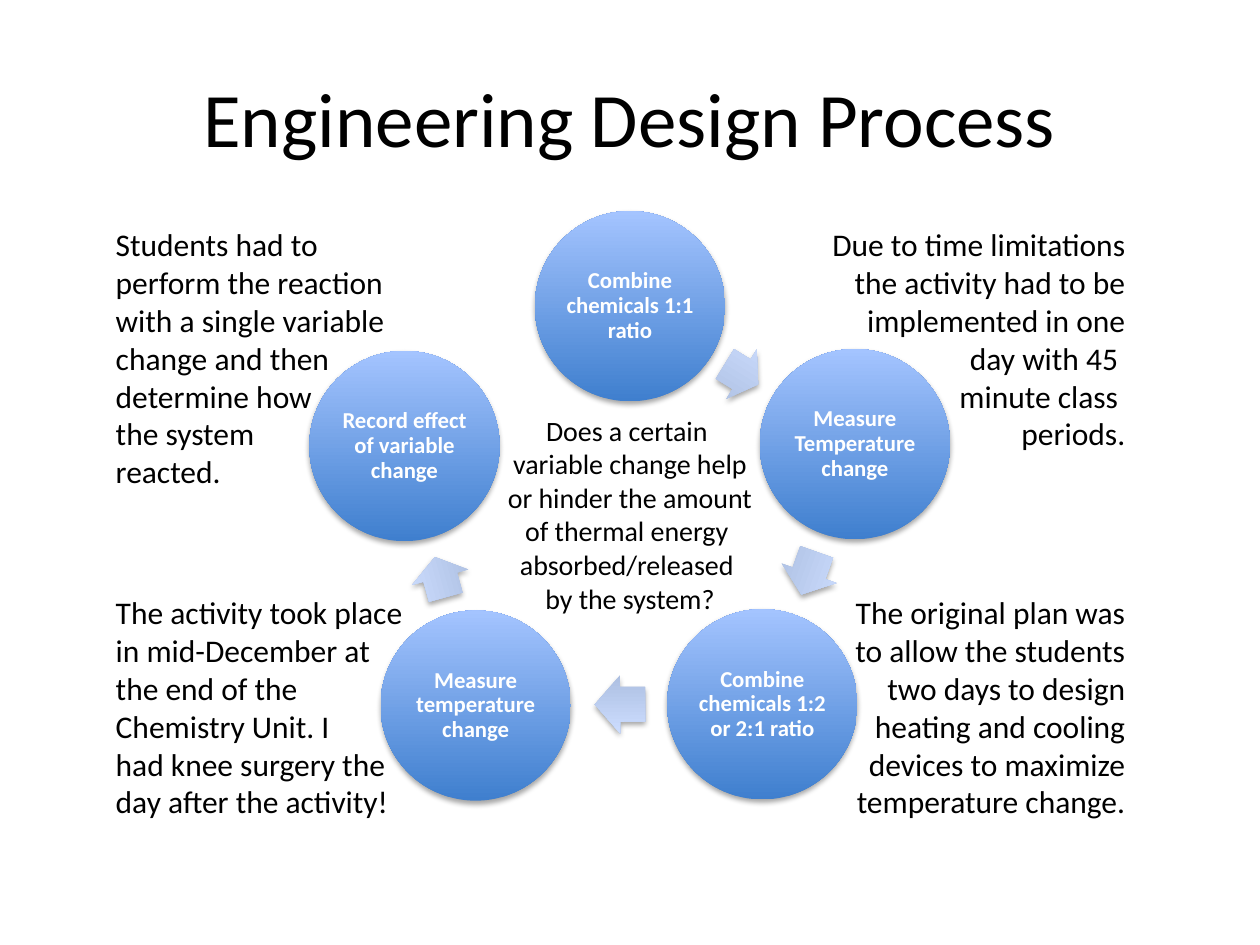
from lxml import etree
from pptx import Presentation
from pptx.dml.color import RGBColor
from pptx.enum.shapes import MSO_SHAPE
from pptx.enum.text import MSO_ANCHOR, PP_ALIGN
from pptx.oxml import parse_xml
from pptx.oxml.ns import nsdecls, qn
from pptx.util import Inches, Pt

OVAL, ARROW = MSO_SHAPE.OVAL, MSO_SHAPE.RIGHT_ARROW
LEFT, CENTER, RIGHT = PP_ALIGN.LEFT, PP_ALIGN.CENTER, PP_ALIGN.RIGHT
MIDDLE, TOP = MSO_ANCHOR.MIDDLE, MSO_ANCHOR.TOP
COLORS = {
    "ink": "000000", "white": "FFFFFF",
    "disc low": "3F7FCE", "disc high": "A4C4FF",
    "arrow low": "ADBFE1", "arrow high": "CCDDFF",
}

deck = Presentation()
deck.slide_width, deck.slide_height = Inches(10), Inches(7.5)
col, row = deck.slide_width / 100, deck.slide_height / 75
slide = deck.slides.add_slide(deck.slide_layouts[6])


def write(shape, lines, size, align, anchor, color="ink", bold=False):
    frame = shape.text_frame
    frame.word_wrap = True
    frame.vertical_anchor = anchor
    frame.text = "\n".join(lines)
    for para in frame.paragraphs:
        para.alignment = align
        for run in para.runs:
            run.font.name = "Calibri"
            run.font.size = Pt(size)
            run.font.bold = bold
            run.font.color.rgb = RGBColor.from_string(COLORS[color])


def shade(shape, kind):
    shape.line.fill.background()
    shape.fill.gradient()
    shape.fill.gradient_angle = 90
    for stop, end in zip(shape.fill.gradient_stops, ("low", "high")):
        stop.color.rgb = RGBColor.from_string(COLORS[f"{kind} {end}"])
    shape.shadow.inherit = False
    cast = parse_xml(
        f'<a:outerShdw {nsdecls("a")} blurRad="{Pt(3.1)}" dist="{Pt(1.8)}" '
        'dir="5400000" rotWithShape="0"/>')
    tint = etree.SubElement(cast, qn("a:srgbClr"), val=COLORS["ink"])
    etree.SubElement(tint, qn("a:alpha"), val="35000")
    shape._element.spPr.find(qn("a:effectLst")).append(cast)


title = slide.shapes.add_textbox(
    int(5 * col), int(3 * row), int(90 * col), int(12.5 * row))
write(title, ["Engineering Design Process"], 44, CENTER, MIDDLE)

steps = [
    ("Combine chemicals 1:1 ratio", 50, 24.3, (58.85, 29.7, 3.1, 31.6)),
    ("Measure Temperature change", 67.85, 35.25, (64.2, 45.5, 3.6, 109.7)),
    ("Combine chemicals 1:2 or 2:1 ratio", 60.5, 55.9,
     (49.2, 55.9, 4, 179.7)),
    ("Measure temperature change", 37.75, 56, (34.95, 45.8, 3.3, 254.7)),
    ("Record effect of variable change", 32.1, 35.4, None),
]
size, tall = 15.1, 4.6
cycle = slide.shapes.add_group_shape()
for label, x, y, arrow in steps:
    disc = cycle.shapes.add_shape(
        OVAL, int((x - size / 2) * col), int((y - size / 2) * row),
        int(size * col), int(size * row))
    shade(disc, "disc")
    write(disc, [label], 13, CENTER, MIDDLE, "white", True)
    frame = disc.text_frame
    frame.margin_left = frame.margin_right = int(0.2 * col)
    frame.margin_top = frame.margin_bottom = int(0.2 * row)
    frame.paragraphs[0].line_spacing = 0.9
    if arrow:
        x, y, wide, turn = arrow
        link = cycle.shapes.add_shape(
            ARROW, int((x - wide / 2) * col), int((y - tall / 2) * row),
            int(wide * col), int(tall * row))
        link.adjustments[0], link.adjustments[1] = 0.6, 0.5
        link.rotation = turn
        shade(link, "arrow")

notes = [
    (38.6, 32.3, 22.8, 17.8, 16, CENTER, [
        "Does a certain ",
        "variable change help or hinder the amount of thermal energy ",
        "absorbed/released ",
        "by the system?"]),
    (8.2, 17.4, 23.5, 22.2, 18, LEFT, [
        "Students had to perform the reaction with a single variable "
        "change and then determine how",
        "the system",
        "reacted."]),
    (8.2, 46.6, 27.9, 19.2, 18, LEFT, [
        "The activity took place",
        "in mid-December at",
        "the end of the",
        "Chemistry Unit. I",
        "had knee surgery the",
        "day after the activity!"]),
    (64.3, 17.4, 26, 19.2, 18, RIGHT, [
        "Due to time limitations the activity had to be implemented in "
        "one day with 45 ",
        "minute class ",
        "periods."]),
    (64.3, 46.6, 26, 19.2, 18, RIGHT, [
        "The original plan was to allow the students two days to design "
        "heating and cooling devices to maximize temperature change."]),
]
for x, y, wide, high, points, align, lines in notes:
    note = slide.shapes.add_textbox(
        int(x * col), int(y * row), int(wide * col), int(high * row))
    write(note, lines, points, align, TOP)

deck.save("out.pptx")
